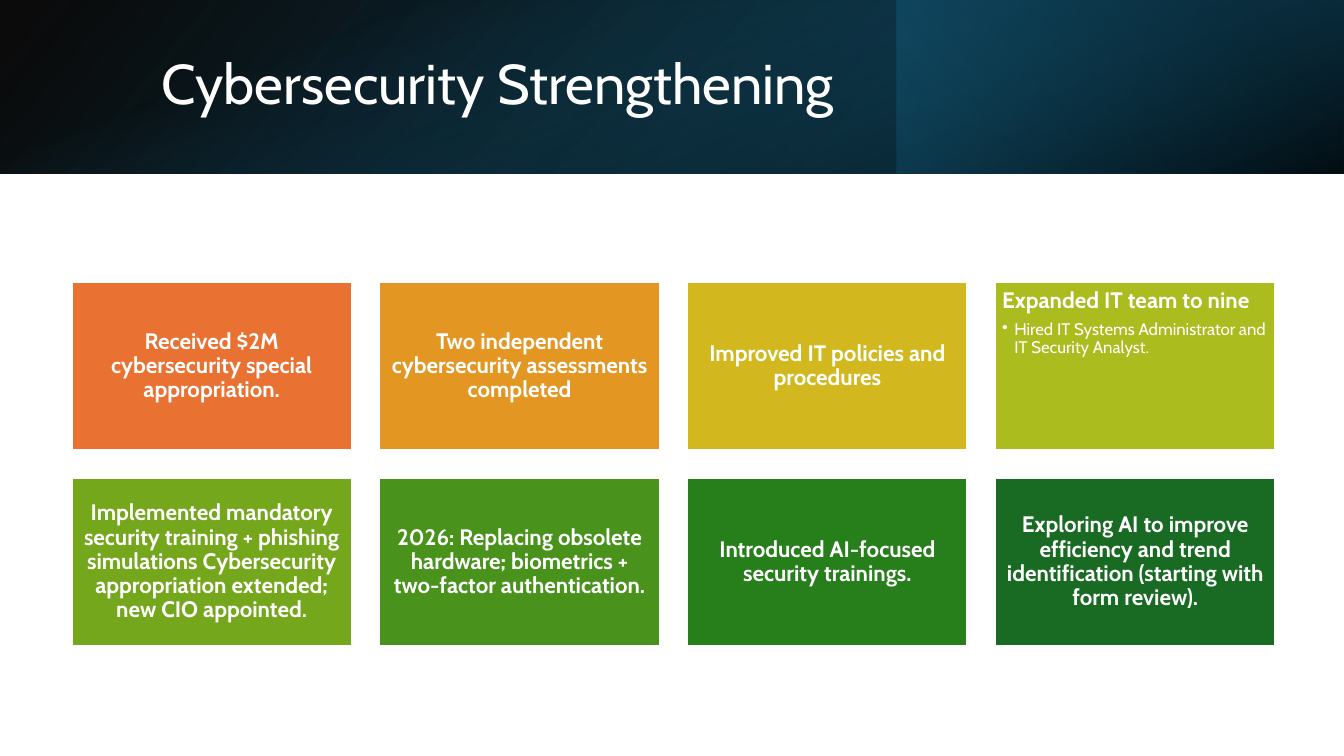
from dataclasses import dataclass

from pptx import Presentation
from pptx import util as u
from pptx.dml.color import RGBColor
from pptx.enum import shapes, text
from pptx.oxml import parse_xml
from pptx.oxml.ns import nsdecls, qn


@dataclass(frozen=True)
class Theme:
    font: str = "Cabin"
    white: str = "FFFFFF"
    black: str = "000000"
    teal: str = "156082"
    deep_teal: str = "104862"
    night: str = "0B3041"
    tiles: tuple = ("E97132", "E49622", "D2B81E", "ABBC1E",
                    "75A71D", "49931D", "277F1B", "196B24")
    title_size: int = 40
    tile_size: int = 16
    detail_size: int = 12


class SlideBuilder:
    def __init__(self, slide, theme):
        self.slide = slide
        self.theme = theme

    def rectangle(self, left, top, width, height):
        rect = self.slide.shapes.add_shape(
            shapes.MSO_SHAPE.RECTANGLE, *map(u.Inches, (left, top, width, height)))
        rect.shadow.inherit = False
        return rect

    def add_words(self, paragraph, words, size, bold=False):
        paragraph.line_spacing = 0.9
        run = paragraph.add_run()
        run.text = words
        run.font.name = self.theme.font
        run.font.size = u.Pt(size)
        run.font.bold = bold
        run.font.color.rgb = RGBColor.from_string(self.theme.white)

    def band(self, box, stops, angle, rotation=0, mirrored=False):
        band = self.rectangle(*box)
        band.rotation = rotation
        band.line.fill.background()
        band.fill.background()
        properties = band._element.spPr
        if mirrored:
            properties.find(qn("a:xfrm")).set("flipH", "1")
        stop_xml = "".join(
            f'<a:gs pos="{place * 1000}"><a:srgbClr val="{color}">'
            f'<a:alpha val="{opacity * 1000}"/></a:srgbClr></a:gs>'
            for place, color, opacity in stops)
        gradient = parse_xml(
            f'<a:gradFill {nsdecls("a")} rotWithShape="1"><a:gsLst>{stop_xml}</a:gsLst>'
            f'<a:lin ang="{angle * 60000}" scaled="0"/></a:gradFill>')
        properties.replace(properties.find(qn("a:noFill")), gradient)

    def title(self, words, left, top, width, height):
        title = self.slide.shapes.title
        title.left, title.top, title.width, title.height = map(
            u.Inches, (left, top, width, height))
        self.slide.shapes._spTree.append(title._element)
        frame = title.text_frame
        frame.auto_size = text.MSO_AUTO_SIZE.NONE
        frame.vertical_anchor = text.MSO_ANCHOR.MIDDLE
        heading = frame.paragraphs[0]
        heading.alignment = text.PP_ALIGN.LEFT
        self.add_words(heading, words, self.theme.title_size)

    def tile(self, box, color, headline, detail=None):
        tile = self.rectangle(*box)
        tile.fill.solid()
        tile.fill.fore_color.rgb = RGBColor.from_string(color)
        tile.line.color.rgb = RGBColor.from_string(self.theme.white)
        tile.line.width = u.Pt(1.5)
        frame = tile.text_frame
        frame.word_wrap = True
        frame.margin_left = frame.margin_right = u.Inches(0.07)
        frame.margin_top = frame.margin_bottom = u.Inches(0.07)
        frame.vertical_anchor = text.MSO_ANCHOR.TOP if detail else text.MSO_ANCHOR.MIDDLE
        lead = frame.paragraphs[0]
        lead.alignment = text.PP_ALIGN.LEFT if detail else text.PP_ALIGN.CENTER
        self.add_words(lead, headline, self.theme.tile_size, bold=True)
        if detail:
            lead.space_after = u.Pt(5.6)
            self.bullet(frame.add_paragraph(), detail)

    def bullet(self, paragraph, words):
        paragraph.level = 1
        paragraph.alignment = text.PP_ALIGN.LEFT
        properties = paragraph._p.get_or_add_pPr()
        properties.set("marL", str(u.Inches(0.12)))
        properties.set("indent", str(-u.Inches(0.12)))
        properties.append(parse_xml(f'<a:buChar {nsdecls("a")} char="•"/>'))
        self.add_words(paragraph, words, self.theme.detail_size)


ACHIEVEMENTS = [
    ("Received $2M cybersecurity special appropriation.",),
    ("Two independent cybersecurity assessments completed",),
    ("Improved IT policies and procedures",),
    ("Expanded IT team to nine",
     "Hired IT Systems Administrator and IT Security Analyst."),
    ("Implemented mandatory security training + phishing simulations "
     "Cybersecurity appropriation extended; new CIO appointed.",),
    ("2026: Replacing obsolete hardware; biometrics + two-factor authentication.",),
    ("Introduced AI-focused security trainings.",),
    ("Exploring AI to improve efficiency and trend identification "
     "(starting with form review).",),
]


def main():
    theme = Theme()
    deck = Presentation()
    deck.slide_width, deck.slide_height = u.Inches(13.33), u.Inches(7.5)
    builder = SlideBuilder(deck.slides.add_slide(deck.slide_layouts[5]), theme)

    builder.band((0, 0, 13.33, 1.72),
                 [(0, theme.black, 96), (100, theme.deep_teal, 100)], 140, mirrored=True)
    builder.band((8.89, 0, 4.44, 1.72),
                 [(19, theme.night, 68), (100, theme.teal, 79)], 320, rotation=180)
    builder.band((5.8, -5.8, 1.72, 13.33),
                 [(23, theme.teal, 0), (99, theme.black, 74)], 340, rotation=90)
    builder.title("Cybersecurity Strengthening", 1.5, 0.38, 10.98, 0.96)

    columns, left, top = 4, 0.71, 2.8
    column_step, row_step = (9.87 - left) / (columns - 1), 1.94
    for index, (color, achievement) in enumerate(zip(theme.tiles, ACHIEVEMENTS)):
        row, column = divmod(index, columns)
        box = (left + column * column_step, top + row * row_step, 2.78, 1.67)
        builder.tile(box, color, *achievement)

    deck.save("out.pptx")


if __name__ == "__main__":
    main()
